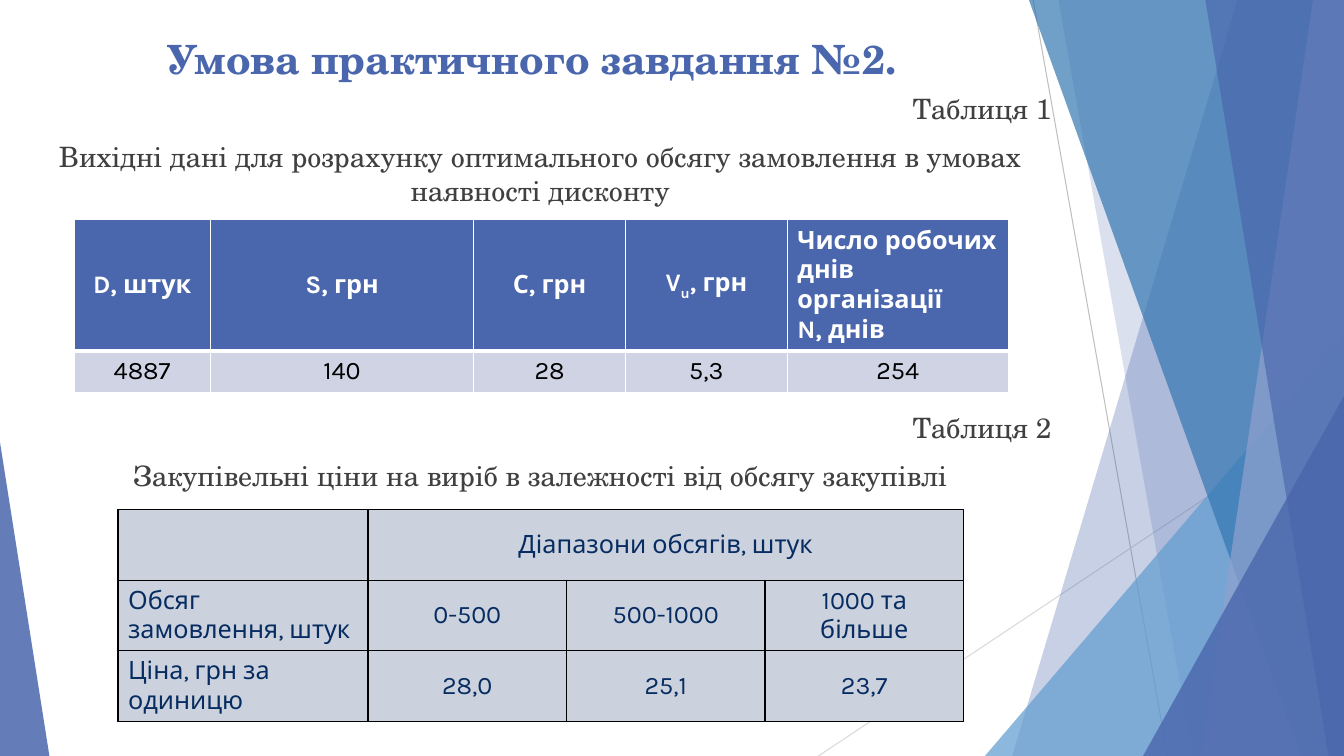
from lxml import etree
from pptx import Presentation
from pptx.dml.color import RGBColor
from pptx.enum.shapes import MSO_CONNECTOR, MSO_SHAPE
from pptx.enum.text import MSO_ANCHOR, PP_ALIGN
from pptx.oxml import parse_xml
from pptx.oxml.ns import nsdecls, qn
from pptx.util import Pt

WIDE, HIGH = 960, 540
BLUE = RGBColor(0x4A, 0x66, 0xAC)
SKY = RGBColor(0x62, 0x9D, 0xD1)
DEEP = RGBColor(0x34, 0x77, 0xB2)
PALE = RGBColor(0x90, 0xA2, 0xCF)
SILVER = RGBColor(0xBF, 0xBF, 0xBF)
LIGHT = RGBColor(0xD9, 0xD9, 0xD9)
WHITE = RGBColor(0xFF, 0xFF, 0xFF)
BLACK = RGBColor(0, 0, 0)
GRAY = RGBColor(0x40, 0x40, 0x40)
LILAC = RGBColor(0xD0, 0xD3, 0xE3)
STEEL = RGBColor(0xCC, 0xD2, 0xDD)
NAVY = RGBColor(0x07, 0x2C, 0x62)
SERIF, SANS = "TeX Gyre Schola", "Karla"
LEFT, MID, RIGHT = PP_ALIGN.LEFT, PP_ALIGN.CENTER, PP_ALIGN.RIGHT


def write(frame, lines, font, size, color, bold=False, gap=0):
    """Write (text, align) lines; every second part between underscores is a subscript."""
    frame.word_wrap = True
    for i, (text, align) in enumerate(lines):
        para = frame.add_paragraph() if i else frame.paragraphs[0]
        para.alignment = align
        para.space_before = Pt(gap if i else 0)
        for k, part in enumerate(text.split("_")):
            run = para.add_run()
            run.text = part
            run.font.name, run.font.size = font, Pt(size)
            run.font.bold = bold
            run.font.color.rgb = color
            if k % 2:
                run._r.get_or_add_rPr().set("baseline", "-25000")


def style(cell, back, edge, top=1, base=1):
    """Fill a cell and draw its four borders."""
    cell.vertical_anchor = MSO_ANCHOR.MIDDLE
    props = cell._tc.get_or_add_tcPr()
    for side, width in (("L", 1), ("R", 1), ("T", top), ("B", base)):
        props.append(parse_xml(
            f'<a:ln{side} {nsdecls("a")} w="{Pt(width)}"><a:solidFill>'
            f'<a:srgbClr val="{edge}"/></a:solidFill></a:ln{side}>'))
    cell.fill.solid()
    cell.fill.fore_color.rgb = back


deck = Presentation()
deck.slide_width, deck.slide_height = Pt(WIDE), Pt(HIGH)
slide = deck.slides.add_slide(deck.slide_layouts[6])
shapes = slide.shapes

# Thin lines behind the facets
for x1, y1, x2, y2, color in ((738, 0, 834, HIGH, SILVER),
                              (WIDE, 290, 584.6, HIGH, LIGHT)):
    line = shapes.add_connector(MSO_CONNECTOR.STRAIGHT, Pt(x1), Pt(y1), Pt(x2), Pt(y2))
    line.line.color.rgb = color
    line.line.width = Pt(0.75)
    etree.SubElement(line._element.spPr, qn("a:effectLst"))

# Facets: a band is (top x, bottom x), a triangle is (left, top, right, tip)
facets = (
    ((884, 723), BLUE, 30),
    ((756, 852), BLUE, 20),
    ((703.5, 240, WIDE, 1), SKY, 72),
    ((735, 929.5), DEEP, 70),
    ((938, 858), PALE, 70),
    ((861, 949), BLUE, 65),
    ((816.5, 283, WIDE, 1), BLUE, 80),
    ((0, 316, 35.3, 0), BLUE, 85),
)
for place, color, alpha in facets:
    if len(place) == 2:
        high, low = place
        pen = shapes.build_freeform(Pt(high), 0)
        pen.add_line_segments([(Pt(WIDE), 0), (Pt(WIDE), Pt(HIGH)), (Pt(low), Pt(HIGH))])
        facet = pen.convert_to_shape()
    else:
        left, top, right, tip = place
        facet = shapes.add_shape(MSO_SHAPE.ISOSCELES_TRIANGLE, Pt(left), Pt(top),
                                 Pt(right - left), Pt(HIGH - top))
        facet.adjustments[0] = tip
    facet.shadow.inherit = False
    facet.line.fill.background()
    facet.fill.solid()
    facet.fill.fore_color.rgb = color
    tint = facet._element.spPr.find(".//" + qn("a:srgbClr"))
    etree.SubElement(tint, qn("a:alpha")).set("val", str(alpha * 1000))

# Title and table captions
title = shapes.add_textbox(Pt(112.3), Pt(21), Pt(549), Pt(48))
write(title.text_frame, [("Умова практичного завдання №2.", LEFT)], SERIF, 28.8, BLUE, True)

captions = (
    (62, "Таблиця 1", "Вихідні дані для розрахунку оптимального обсягу замовлення "
                      "в умовах наявності дисконту"),
    (290, "Таблиця 2", "Закупівельні ціни на виріб в залежності від обсягу закупівлі"),
)
for top, label, text in captions:
    box = shapes.add_textbox(Pt(13.7), Pt(top), Pt(744.5), Pt(70))
    write(box.text_frame, [(label, RIGHT), (text, MID)], SERIF, 20, GRAY, gap=10)

# Input data
heads = ("D, штук", "S, грн", "С, грн", "V_u_, грн",
         "Число робочих днів організації\nN, днів")
data = ("4887", "140", "28", "5,3", "254")
widths = (97.5, 188, 108.6, 115.4, 158)
grid = shapes.add_table(2, 5, Pt(52.8), Pt(157), Pt(sum(widths)), Pt(120.5)).table
grid.rows[0].height, grid.rows[1].height = Pt(91), Pt(29.5)
for c, (width, head, value) in enumerate(zip(widths, heads, data)):
    grid.columns[c].width = Pt(width)
    cell = grid.cell(0, c)
    style(cell, BLUE, WHITE, base=3)
    align = LEFT if "\n" in head else MID
    write(cell.text_frame, [(part, align) for part in head.split("\n")], SANS, 18, WHITE, True)
    cell = grid.cell(1, c)
    style(cell, LILAC, WHITE, top=3)
    write(cell.text_frame, [(value, MID)], SANS, 18, BLACK)

# Purchase prices
prices = (
    ("", "Діапазони обсягів, штук", "", ""),
    ("Обсяг замовлення, штук", "0-500", "500-1000", "1000 та більше"),
    ("Ціна, грн за одиницю", "28,0", "25,1", "23,7"),
)
widths = (178.6, 141.8, 141.8, 141.8)
grid = shapes.add_table(3, 4, Pt(84.3), Pt(364.2), Pt(sum(widths)), Pt(150.6)).table
for c, width in enumerate(widths):
    grid.columns[c].width = Pt(width)
for r, row in enumerate(prices):
    grid.rows[r].height = Pt(50.2)
    for c, text in enumerate(row):
        cell = grid.cell(r, c)
        style(cell, STEEL, BLACK)
        if text:
            write(cell.text_frame, [(text, MID if c else LEFT)], SANS, 18, NAVY)
grid.cell(0, 1).merge(grid.cell(0, 3))

deck.save("out.pptx")
